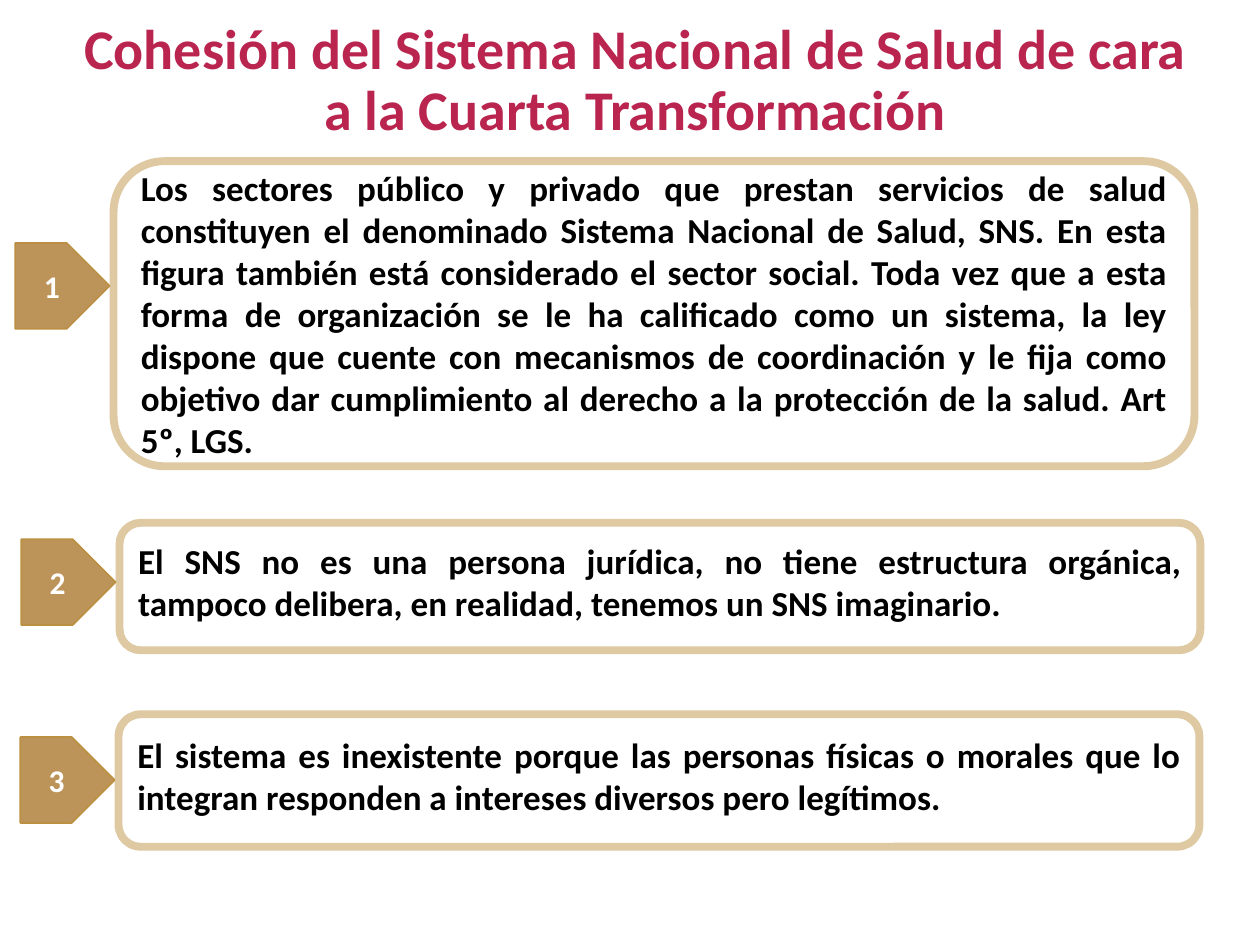
from pptx import Presentation
from pptx.dml.color import RGBColor
from pptx.enum.shapes import MSO_SHAPE
from pptx.enum.text import MSO_ANCHOR, PP_ALIGN
from pptx.util import Cm, Pt

TITLE = "Cohesión del Sistema Nacional de Salud de cara a la Cuarta Transformación"
TITLE_BOX = (1.4, 0.51, 22.83, 2.29)
PANEL_WIDTH = 21.79
TAG_WIDTH, TAG_HEIGHT, TAG_OFFSET = 1.9, 1.73, 1.98
SECTIONS = [
    {
        "box": (2.29, 3.25, PANEL_WIDTH, 6.15),
        "tag_drop": 1.65,
        "bottom_margin": 0.13,
        "text": "Los sectores público y privado que prestan servicios de salud "
                "constituyen el denominado Sistema Nacional de Salud, SNS. En esta "
                "figura también está considerado el sector social. Toda vez que a esta "
                "forma de organización se le ha calificado como un sistema, la ley "
                "dispone que cuente con mecanismos de coordinación y le fija como "
                "objetivo dar cumplimiento al derecho a la protección de la salud. "
                "Art 5º, LGS.",
    },
    {
        "box": (2.41, 10.54, PANEL_WIDTH, 2.57),
        "tag_drop": 0.33,
        "bottom_margin": 0.34,
        "text": "El SNS no es una persona jurídica, no tiene estructura orgánica, "
                "tampoco delibera, en realidad, tenemos un SNS imaginario.",
    },
    {
        "box": (2.39, 14.4, PANEL_WIDTH, 2.67),
        "tag_drop": 0.46,
        "bottom_margin": 0.34,
        "text": "El sistema es inexistente porque las personas físicas o morales que lo "
                "integran responden a intereses diversos pero legítimos.",
    },
]


def color(value):
    """Turn a hex string into a colour."""
    return RGBColor.from_string(value)


def set_attributes(target, values):
    """Set each named attribute of the target."""
    for name, value in values.items():
        setattr(target, name, value)


def write_text(shape, text, size, hex_color, alignment, line_spacing=1.0, bottom=0.13):
    """Write one bold, vertically centred paragraph in the shape."""
    frame = shape.text_frame
    set_attributes(frame, {
        "word_wrap": True,
        "vertical_anchor": MSO_ANCHOR.MIDDLE,
        "margin_bottom": Cm(bottom),
    })
    paragraph = frame.paragraphs[0]
    set_attributes(paragraph, {"alignment": alignment, "line_spacing": line_spacing})
    run = paragraph.add_run()
    run.text = text
    set_attributes(run.font, {"name": "Calibri", "size": Pt(size), "bold": True})
    run.font.color.rgb = color(hex_color)


def add_outlined_shape(slide, kind, box, line_color, line_width, fill_color=None):
    """Add a preset shape with its outline and optional fill."""
    shape = slide.shapes.add_shape(kind, *map(Cm, box))
    shape.shadow.inherit = False
    if fill_color:
        shape.fill.solid()
        shape.fill.fore_color.rgb = color(fill_color)
    else:
        shape.fill.background()
    shape.line.color.rgb = color(line_color)
    shape.line.width = Pt(line_width)
    return shape


def add_title(slide, box):
    """Place the slide title in the box."""
    title = slide.shapes.add_textbox(*map(Cm, box))
    write_text(title, TITLE, 32, "B9254F", PP_ALIGN.CENTER, line_spacing=0.9)


def add_section(slide, number, box, tag_drop, bottom_margin, text):
    """Place a rounded panel in the box and its numbered tag to the left."""
    left, top = box[:2]
    panel = add_outlined_shape(slide, MSO_SHAPE.ROUNDED_RECTANGLE, box, "DEC9A2", 4.5)
    write_text(panel, text, 20, "000000", PP_ALIGN.JUSTIFY, bottom=bottom_margin)
    tag_box = (left - TAG_OFFSET, top + tag_drop, TAG_WIDTH, TAG_HEIGHT)
    tag = add_outlined_shape(slide, MSO_SHAPE.PENTAGON, tag_box, "BC9042", 1, "BC945A")
    write_text(tag, str(number), 18, "FFFFFF", PP_ALIGN.CENTER)


def main():
    """Build and save the presentation."""
    presentation = Presentation()
    set_attributes(presentation, {"slide_width": Cm(25.4), "slide_height": Cm(19.05)})
    slide = presentation.slides.add_slide(presentation.slide_layouts[6])
    add_title(slide, TITLE_BOX)
    for number, section in enumerate(SECTIONS, start=1):
        add_section(slide, number, **section)
    presentation.save("out.pptx")


if __name__ == "__main__":
    main()
